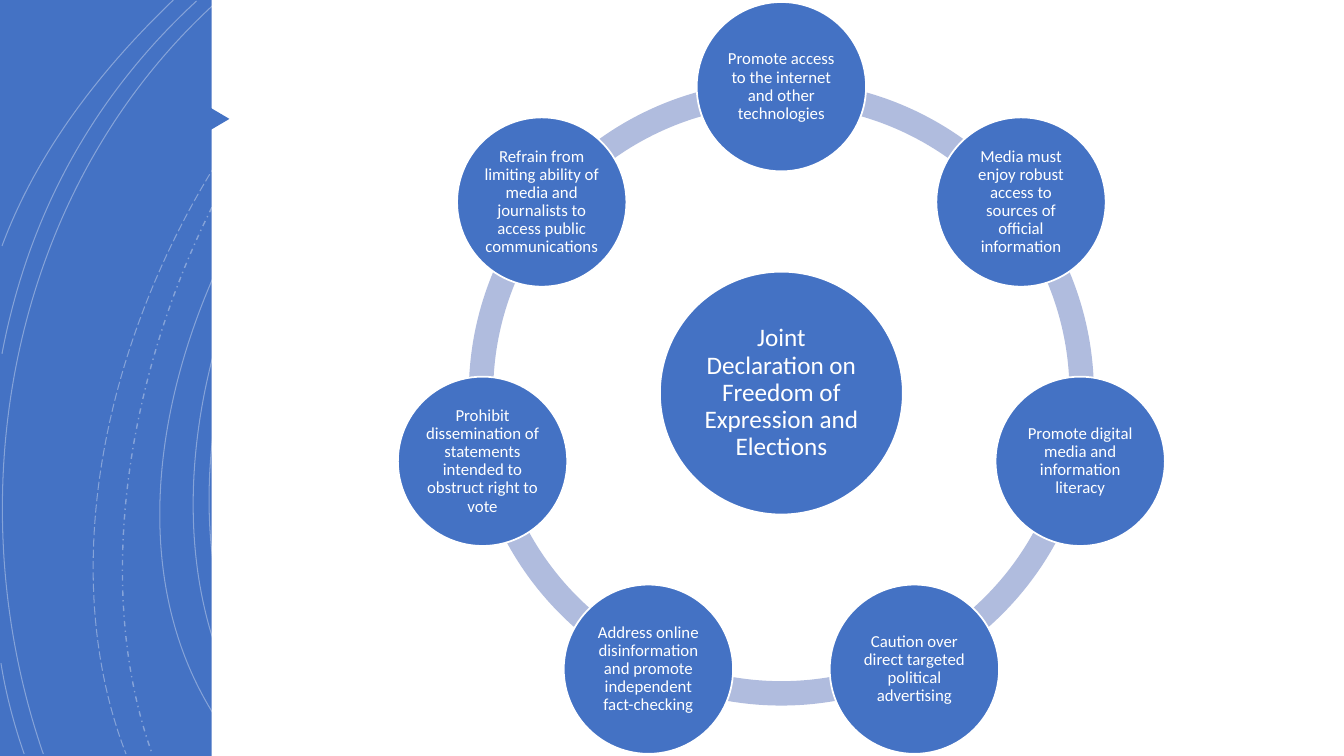
import math

from lxml import etree
from pptx import Presentation
from pptx.dml.color import RGBColor
from pptx.enum.dml import MSO_LINE
from pptx.enum.shapes import MSO_SHAPE
from pptx.enum.text import MSO_ANCHOR, PP_ALIGN
from pptx.oxml.ns import qn
from pptx.util import Inches, Pt

SOLID, LONG_DASH, DASH_DOT = MSO_LINE.SOLID, MSO_LINE.LONG_DASH, MSO_LINE.DASH_DOT
RECT, TRIANGLE = MSO_SHAPE.RECTANGLE, MSO_SHAPE.ISOSCELES_TRIANGLE
OVAL, BLOCK_ARC = MSO_SHAPE.OVAL, MSO_SHAPE.BLOCK_ARC
MIDDLE, CENTER = MSO_ANCHOR.MIDDLE, PP_ALIGN.CENTER

COLORS = {"blue": "4472C4", "white": "FFFFFF", "ring": "B0BCDE"}
FONT = "Calibri"

HUB = "Joint Declaration on Freedom of Expression and Elections"
# Clockwise from the top
PRINCIPLES = [
    "Promote access to the internet and other technologies",
    "Media must enjoy robust access to sources of official information",
    "Promote digital media and information literacy",
    "Caution over direct targeted political advertising",
    "Address online disinformation and promote independent fact-checking",
    "Prohibit dissemination of statements intended to obstruct right to vote",
    "Refrain from limiting ability of media and journalists to access public communications",
]

# Start, two control points and end of each curve, then dash and width
CURVES = [
    ([(4.64, 0), (2.44, 1.33), (1.1, 5.41), (2.94, 7.48)], SOLID, 0.75),
    ([(4.51, 0), (2.31, 1.38), (0.97, 5.33), (2.72, 7.48)], SOLID, 0.75),
    ([(4.27, 0), (2.17, 1.47), (0.53, 5.29), (2.41, 7.48)], SOLID, 0.75),
    ([(3.63, 0), (1.76, 1.66), (0.65, 5.09), (1.51, 7.48)], DASH_DOT, 1),
    ([(3.51, 0), (1.57, 1.69), (0.29, 4.99), (1.25, 7.48)], LONG_DASH, 0.75),
    ([(2.17, 0), (0.11, 1.85), (-0.46, 4.9), (0.43, 7.48)], SOLID, 0.75),
    ([(1.95, 0.01), (0.92, 0.96), (0.28, 2.14), (0.02, 3.51)], SOLID, 0.75),
    ([(0.01, 6.58), (0.06, 6.89), (0.14, 7.19), (0.24, 7.48)], SOLID, 0.75),
    ([(1.72, 0), (1, 0.69), (0.37, 1.5), (0.02, 2.44)], SOLID, 0.75),
]
CURVE_ALPHA = 35000

SLIDE_W, SLIDE_H = 13.33, 7.5
PANEL_W = 2.1
CX, CY = 7.75, 3.9
ORBIT = 3.04
RING_D, RING_THICKNESS = 6.2, 0.039
HUB_D, NODE_D = 2.41, 1.68


def rgb(name):
    return RGBColor.from_string(COLORS[name])


def add_filled(shapes, kind, x, y, w, h, color):
    sp = shapes.add_shape(kind, Inches(x), Inches(y), Inches(w), Inches(h))
    sp.shadow.inherit = False
    sp.fill.solid()
    sp.fill.fore_color.rgb = rgb(color)
    sp.line.fill.background()
    return sp


def add_curve(shapes, points, dash, width):
    """Draw an open cubic Bezier curve in translucent white."""
    start, *rest = [(Inches(x), Inches(y)) for x, y in points]
    builder = shapes.build_freeform(*start)
    builder.add_line_segments(rest, close=False)
    sp = builder.convert_to_shape()
    sp.shadow.inherit = False
    sp.fill.background()
    sp.line.color.rgb = rgb("white")
    sp.line.width = Pt(width)
    sp.line.dash_style = dash
    color = sp.line._ln.find(".//" + qn("a:srgbClr"))
    etree.SubElement(color, qn("a:alpha")).set("val", str(CURVE_ALPHA))

    outline = sp._element.find(".//" + qn("a:path"))
    bezier = etree.SubElement(outline, qn("a:cubicBezTo"))
    for segment in outline.findall(qn("a:lnTo")):
        bezier.append(segment[0])
        outline.remove(segment)


def add_circle(shapes, cx, cy, diameter, text, size, inset):
    sp = add_filled(shapes, OVAL, cx - diameter / 2, cy - diameter / 2,
                    diameter, diameter, "blue")
    sp.line.color.rgb = rgb("white")
    sp.line.width = Pt(1.25)
    tf = sp.text_frame
    tf.word_wrap = True
    tf.vertical_anchor = MIDDLE
    tf.margin_left = tf.margin_right = tf.margin_top = tf.margin_bottom = Inches(inset)
    p = tf.paragraphs[0]
    p.alignment = CENTER
    p.line_spacing = 0.9
    r = p.add_run()
    r.text = text
    r.font.name = FONT
    r.font.size = Pt(size)
    r.font.color.rgb = rgb("white")


def add_side_panel(shapes):
    add_filled(shapes, RECT, 0, 0, SLIDE_W, SLIDE_H, "blue")
    for curve in CURVES:
        add_curve(shapes, *curve)
    add_filled(shapes, RECT, PANEL_W, 0, SLIDE_W - PANEL_W, SLIDE_H, "white")
    add_filled(shapes, TRIANGLE, 1.97, 1.04, 0.33, 0.28, "blue").rotation = 90


def add_cycle(shapes):
    step = 360 / len(PRINCIPLES)
    angles = [270 + i * step for i in range(len(PRINCIPLES))]
    for angle in angles:
        arc = add_filled(shapes, BLOCK_ARC, CX - RING_D / 2, CY - RING_D / 2,
                         RING_D, RING_D, "ring")
        # Arc adjustments are 60000ths of a degree, scaled by 100000
        arc.adjustments[0] = angle % 360 * 0.6
        arc.adjustments[1] = (angle + step) % 360 * 0.6
        arc.adjustments[2] = RING_THICKNESS

    add_circle(shapes, CX, CY, HUB_D, HUB, 18, 0.03)
    for angle, text in zip(angles, PRINCIPLES):
        a = math.radians(angle)
        add_circle(shapes, CX + ORBIT * math.cos(a), CY + ORBIT * math.sin(a),
                   NODE_D, text, 12, 0.02)


def main():
    prs = Presentation()
    prs.slide_width, prs.slide_height = Inches(SLIDE_W), Inches(SLIDE_H)
    s = prs.slides.add_slide(prs.slide_layouts[6])
    add_side_panel(s.shapes)
    add_cycle(s.shapes)
    prs.save("out.pptx")


if __name__ == "__main__":
    main()
